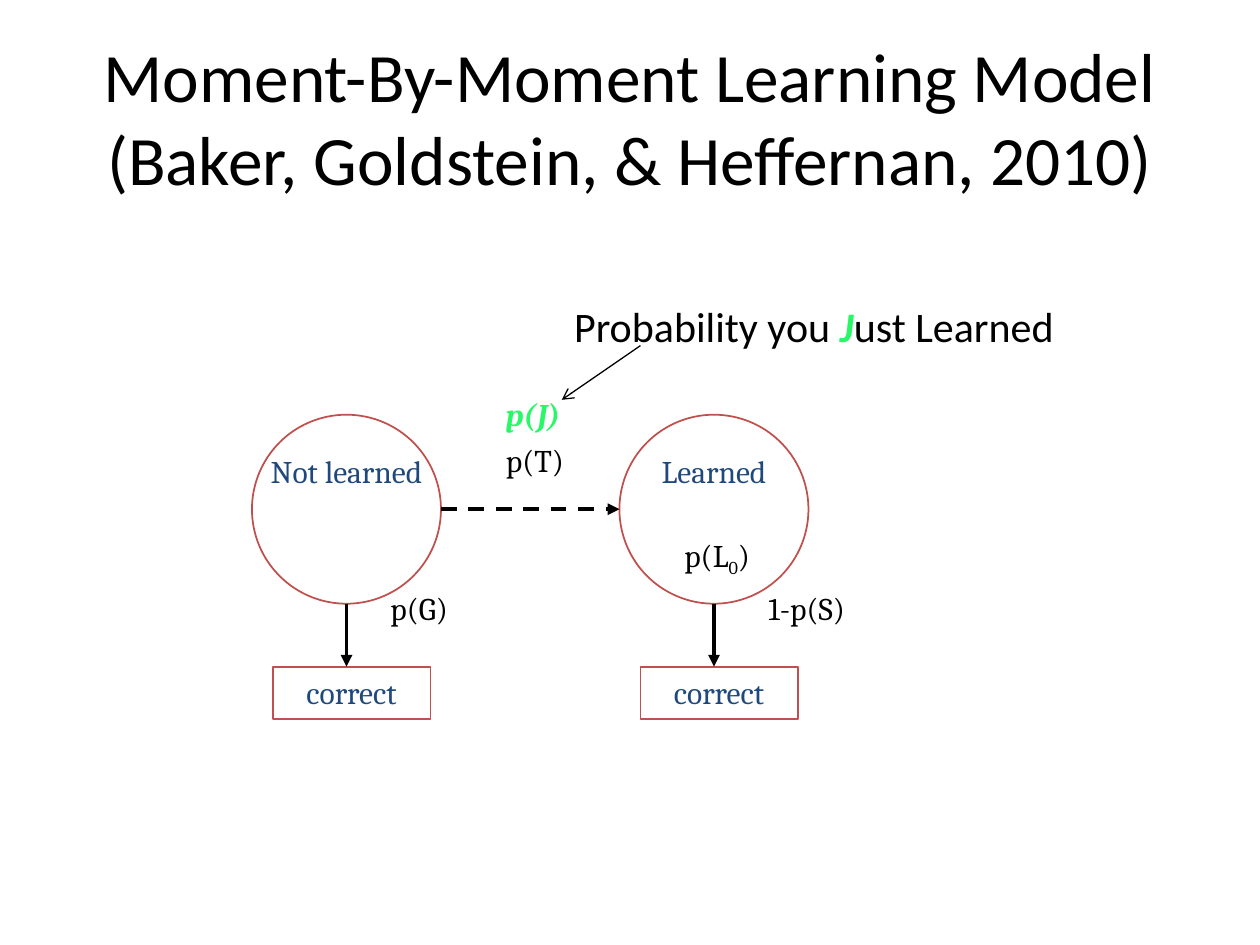
from lxml import etree
from pptx import Presentation
from pptx.dml.color import RGBColor
from pptx.enum import dml, shapes, text
from pptx.oxml.ns import qn
from pptx.util import Pt

BLACK, GREEN, NAVY, RED = "000000", "28F868", "1F497D", "C0504D"
CIRCLE = 108
CENTER = text.PP_ALIGN.CENTER


def color(hex_code):
    """Turn a hex string into a colour."""
    return RGBColor.from_string(hex_code)


def add_text(page, box, words, size=18, font="Cambria", ink=BLACK, align=None):
    """Write one paragraph of plain strings or (string, style) pairs in a box."""
    frame = page.shapes.add_textbox(*map(Pt, box)).text_frame
    frame.word_wrap = True
    para = frame.paragraphs[0]
    para.alignment = align
    para.font.size = Pt(size)
    para.font.name = font
    para.font.color.rgb = color(ink)
    for word in words:
        content, style = (word, "") if isinstance(word, str) else word
        span = para.add_run()
        span.text = content
        if style == "accent":
            span.font.bold = span.font.italic = True
            span.font.color.rgb = color(GREEN)
        elif style == "subscript":
            span.font._element.set("baseline", "-25000")
    return frame


def add_outline(page, kind, box):
    """Draw an unfilled shape with a thin red outline."""
    shape = page.shapes.add_shape(kind, *map(Pt, box))
    shape.shadow.inherit = False
    shape.fill.background()
    shape.line.color.rgb = color(RED)
    shape.line.width = Pt(1)


def add_arrow(page, start, end, width=2.25, head="triangle", dashed=False):
    """Draw a straight black arrow between two points."""
    arrow = page.shapes.add_connector(
        shapes.MSO_CONNECTOR.STRAIGHT, *map(Pt, (*start, *end)))
    arrow.line.color.rgb = color(BLACK)
    arrow.line.width = Pt(width)
    if dashed:
        arrow.line.dash_style = dml.MSO_LINE.DASH
    properties = arrow._element.spPr
    etree.SubElement(properties.find(qn("a:ln")), qn("a:tailEnd"), type=head)
    etree.SubElement(properties, qn("a:effectLst"))


def add_title(page, box):
    """Write the two-line centred title."""
    frame = add_text(page, box, [], 39.6, "Calibri", align=CENTER)
    frame.vertical_anchor = text.MSO_ANCHOR.MIDDLE
    frame.paragraphs[0].text = (
        "Moment-By-Moment Learning Model\v(Baker, Goldstein, & Heffernan, 2010)")


def add_state(page, left, top, name, chance, chance_offset):
    """Draw a knowledge state above the answer that it leads to."""
    middle, answer_top = left + CIRCLE / 2, top + 144
    add_outline(page, shapes.MSO_SHAPE.OVAL, (left, top, CIRCLE, CIRCLE))
    add_text(page, (left - 12, top + 18, 132, 29), [name], ink=NAVY, align=CENTER)
    add_outline(page, shapes.MSO_SHAPE.RECTANGLE, (left + 12, answer_top, 90, 30))
    add_text(page, (left + 24, answer_top, 84, 29), ["correct"], ink=NAVY)
    add_arrow(page, (middle, top + CIRCLE), (middle, answer_top))
    add_text(page, (left + chance_offset, top + 96, 84, 29), [chance])


def add_transition(page, left, top, right):
    """Draw the dashed learning step with its probabilities and callout."""
    add_arrow(page, (left, top), (right, top), dashed=True)
    add_text(page, (left + 30, top - 42.5, 48.5, 29), ["p(T)"])
    add_text(page, (left + 30, top - 69, 48.5, 29), [("p(J)", "accent")])
    add_text(page, (left + 69, top - 123, 327, 36),
             ["Probability you ", ("J", "accent"), "ust Learned"], 24, "Calibri")
    add_arrow(page, (left + 114, top - 93.5), (left + 69, top - 62.5), 0.75, "arrow")


def main():
    """Build and save the slide."""
    deck = Presentation()
    deck.slide_width, deck.slide_height = Pt(720), Pt(540)
    page = deck.slides.add_slide(deck.slide_layouts[6])
    first, second, top = 144, 354, 237
    add_title(page, (36, 21.6, 648, 90))
    add_state(page, first, top, "Not learned", "p(G)", 72)
    add_state(page, second, top, "Learned", "1-p(S)", 78)
    add_text(page, (second + 30, top + 65.5, 72, 29),
             ["p(L", ("0", "subscript"), ")"])
    add_transition(page, first + CIRCLE, top + CIRCLE / 2, second)
    deck.save("out.pptx")


if __name__ == "__main__":
    main()
